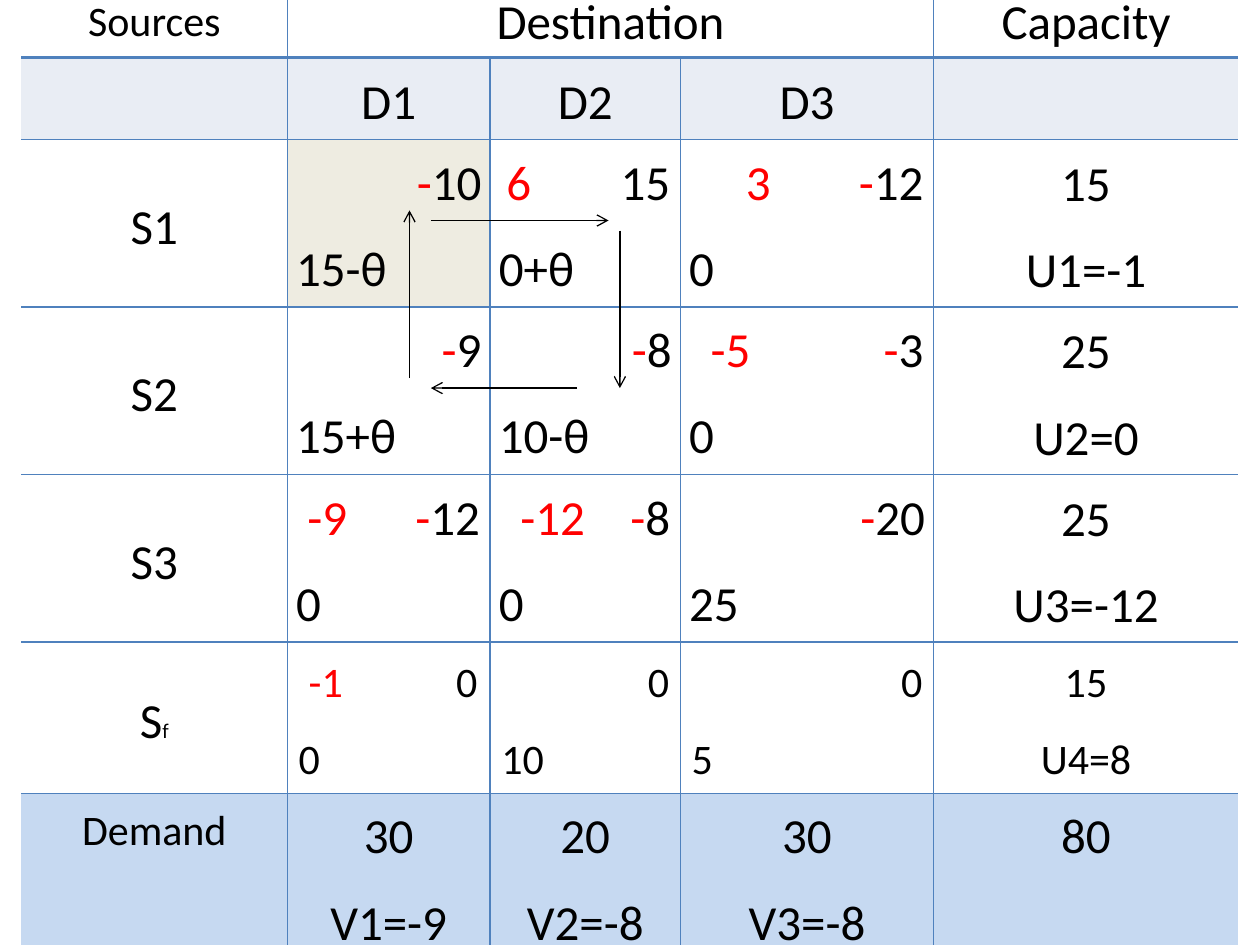
from dataclasses import dataclass

import pptx
import pptx.dml.color
import pptx.enum.shapes
import pptx.enum.text
import pptx.oxml
import pptx.oxml.ns
import pptx.util

Inches, Pt = pptx.util.Inches, pptx.util.Pt
Align = pptx.enum.text.PP_ALIGN
Anchor = pptx.enum.text.MSO_ANCHOR
NS = pptx.oxml.ns.nsdecls("a")

COLORS = {"ink": "000000", "red": "FF0000", "rule": "4F81BD", "head": "E9EDF4",
          "pivot": "EEECE1", "total": "C6D9F1", "white": "FFFFFF"}
COLS = [2.11, 1.61, 1.51, 2.01, 2.42]
ROWS = [0.61, 0.65, 1.33, 1.33, 1.33, 1.2, 0.76]
FILLS = [None, "head", None, None, "white", "white", "total"]
SLACK = 7  # table row that holds the last source is SLACK - 2


@dataclass
class Route:
    cost: str
    load: str
    sign: str = ""
    mark: str = ""      # red opportunity value
    shift: float = 0    # where the red value starts


@dataclass
class Source:
    name: str
    routes: list[Route]
    stock: str
    dual: str


@dataclass
class Arrow:
    x1: float
    y1: float
    x2: float
    y2: float


SOURCES = [
    Source("S1", [Route("10", "15-θ", "-"), Route("15", "0+θ", "", "6", 0.06),
                  Route("12", "0", "-", "3", 0.45)], "15", "U1=-1"),
    Source("S2", [Route("9", "15+θ", "-"), Route("8", "10-θ", "-"),
                  Route("3", "0", "-", "-5", 0.17)], "25", "U2=0"),
    Source("S3", [Route("12", "0", "-", "-9", 0.09), Route("8", "0", "-", "-12", 0.17),
                  Route("20", "25", "-")], "25", "U3=-12"),
    Source("S", [Route("0", "0", "", "-1", 0.08), Route("0", "10"),
                 Route("0", "5")], "15", "U4=8"),
]
DEMAND = [("30", "V1=-9"), ("20", "V2=-8"), ("30", "V3=-8"), ("80",)]
LOOP = [Arrow(3.25, 3, 3.25, 1.67), Arrow(4.58, 3.08, 3.42, 3.08),
        Arrow(3.42, 1.75, 4.83, 1.75), Arrow(4.92, 1.83, 4.92, 3.08)]


def rgb(name: str) -> pptx.dml.color.RGBColor:
    return pptx.dml.color.RGBColor.from_string(COLORS[name])


def write(para, text: str, *, size: float = 28, color: str = "ink") -> None:
    run = para.add_run()
    run.text = text
    run.font.name, run.font.size = "Calibri", Pt(size)
    run.font.color.rgb = rgb(color)


def start(cell, first: bool, align=Align.CENTER, tabs=()):
    """Begin a paragraph, with optional (position, alignment) tab stops."""
    frame = cell.text_frame
    para = frame.paragraphs[0] if first else frame.add_paragraph()
    if tabs:
        stops = "".join(f'<a:tab pos="{Inches(pos)}" algn="{side}"/>' for pos, side in tabs)
        para._p.get_or_add_pPr().append(
            pptx.oxml.parse_xml(f"<a:tabLst {NS}>{stops}</a:tabLst>"))
    para.alignment, para.line_spacing, para.space_after = align, 1.15, Pt(10)
    return para


def center(cell, lines, size: float = 28) -> None:
    for i, line in enumerate(lines):
        write(start(cell, i == 0), line, size=size)


def fill_route(cell, route: Route, width: float, size: float) -> None:
    if route.mark:
        para = start(cell, True, Align.LEFT, [(route.shift, "l"), (width - 0.01, "r")])
        write(para, f"\t{route.mark}\t", size=size, color="red")
    else:
        para = start(cell, True, Align.RIGHT)
    if route.sign:
        write(para, route.sign, size=size, color="red")
    write(para, route.cost, size=size)
    write(start(cell, False, Align.LEFT), route.load, size=size)


def style(cell, row: int, col: int) -> None:
    """Set the margins, fill and borders of one cell."""
    side = 0.09 if row == SLACK - 2 else 0.07
    cell.margin_left = cell.margin_right = Inches(side)
    cell.margin_top = cell.margin_bottom = Inches(0.04)
    plain = row in range(2, 5) and col in range(1, 4)
    cell.vertical_anchor = Anchor.TOP if plain or row == 6 else Anchor.MIDDLE
    fill = "pivot" if (row, col) == (2, 1) else FILLS[row]
    if fill:
        cell.fill.solid()
        cell.fill.fore_color.rgb = rgb(fill)
    else:
        cell.fill.background()
    edges = {"L": 1 if col else 0, "R": 1 if col < len(COLS) - 1 else 0,
             "T": (0, 2.25)[row] if row < 2 else 1,
             "B": 2.25 if row == 0 else 1 if row < len(ROWS) - 1 else 0}
    props = cell._tc.get_or_add_tcPr()
    for i, (edge, wide) in enumerate(edges.items()):
        paint = (f'<a:solidFill><a:srgbClr val="{COLORS["rule"]}"/></a:solidFill>'
                 if wide else "<a:noFill/>")
        props.insert(i, pptx.oxml.parse_xml(
            f'<a:ln{edge} {NS} w="{Pt(wide)}">{paint}</a:ln{edge}>'))


def draw_arrow(slide, arrow: Arrow) -> None:
    ends = [Inches(n) for n in (arrow.x1, arrow.y1, arrow.x2, arrow.y2)]
    line = slide.shapes.add_connector(pptx.enum.shapes.MSO_CONNECTOR.STRAIGHT, *ends)
    line.line.width = Pt(0.75)
    line.line.color.rgb = rgb("ink")
    line.line._get_or_add_ln().append(
        pptx.oxml.parse_xml(f'<a:tailEnd {NS} type="arrow"/>'))
    line._element.spPr.append(pptx.oxml.parse_xml(f"<a:effectLst {NS}/>"))


def draw_table(slide) -> None:
    table = slide.shapes.add_table(
        len(ROWS), len(COLS), Inches(0.17), Inches(-0.17),
        Inches(sum(COLS)), Inches(sum(ROWS))).table
    table.first_row = table.horz_banding = False
    for col, width in zip(table.columns, COLS):
        col.width = Inches(width)
    for row, height in zip(table.rows, ROWS):
        row.height = Inches(height)
    for r in range(len(ROWS)):
        for c in range(len(COLS)):
            style(table.cell(r, c), r, c)

    # Headings
    table.cell(0, 1).merge(table.cell(0, 3))
    center(table.cell(0, 0), ["Sources"], 24)
    center(table.cell(0, 1), ["Destination"])
    center(table.cell(0, 4), ["Capacity"])
    for c in range(1, 4):
        center(table.cell(1, c), [f"D{c}"])

    # Sources and their routes
    for r, source in enumerate(SOURCES, 2):
        last = r == SLACK - 2
        size = 24 if last else 28
        center(table.cell(r, 0), [source.name])
        if last:
            write(table.cell(r, 0).text_frame.paragraphs[0], "f", size=12)
        for c, route in enumerate(source.routes, 1):
            inner = COLS[c] - (0.18 if last else 0.14)
            fill_route(table.cell(r, c), route, inner, size)
        center(table.cell(r, 4), [source.stock, source.dual], size)

    # Demand
    center(table.cell(6, 0), ["Demand"], 24)
    for c, lines in enumerate(DEMAND, 1):
        center(table.cell(6, c), lines)


def main() -> None:
    deck = pptx.Presentation()
    deck.slide_width, deck.slide_height = Inches(10), Inches(7.5)
    slide = deck.slides.add_slide(deck.slide_layouts[6])
    draw_table(slide)
    for arrow in LOOP:
        draw_arrow(slide, arrow)
    deck.save("out.pptx")


if __name__ == "__main__":
    main()
